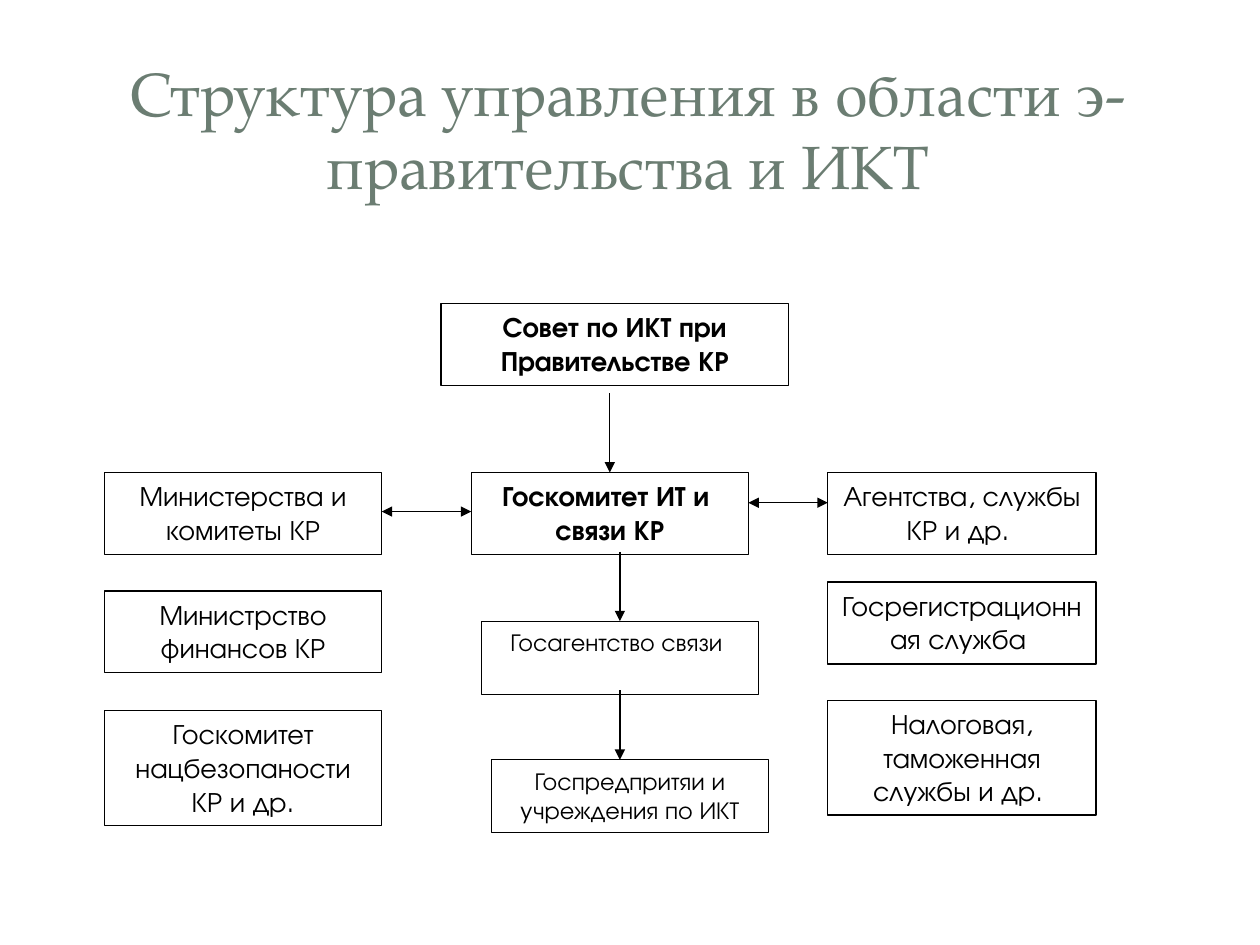
from lxml import etree
from pptx import Presentation
from pptx.dml.color import RGBColor
from pptx.enum.shapes import MSO_CONNECTOR, MSO_SHAPE
from pptx.enum.text import MSO_ANCHOR, PP_ALIGN
from pptx.oxml.ns import qn
from pptx.util import Inches, Pt

COLORS = {"title": "6B7D72", "ink": "000000"}
TITLE_FONT = "TeX Gyre Pagella"
BODY_FONT = "TeX Gyre Adventor"


def write_centred(frame, lines, font, size, color, bold=False):
    frame.word_wrap = True
    for number, line in enumerate(lines):
        para = frame.add_paragraph() if number else frame.paragraphs[0]
        para.alignment = PP_ALIGN.CENTER
        span = para.add_run()
        span.text = line
        span.font.name = font
        span.font.size = Pt(size)
        span.font.bold = bold
        span.font.color.rgb = RGBColor.from_string(COLORS[color])


deck = Presentation()
deck.slide_width = Inches(10)
deck.slide_height = Inches(7.5)
page = deck.slides.add_slide(deck.slide_layouts[6])

title = page.shapes.add_textbox(Inches(0.47), Inches(0.45), Inches(9.03), Inches(1.14))
title.text_frame.vertical_anchor = MSO_ANCHOR.MIDDLE
write_centred(title.text_frame, ["Структура управления в области э-правительства и ИКТ"],
              TITLE_FONT, 35, "title")

# Organisations: left, top, width, height, text size, bold, lines
LEFT, RIGHT = 0.83, 6.57
WIDE, NARROW = 2.2, 2.13
TALL, MEDIUM, LOW = 0.91, 0.65, 0.58
ROW = 3.75
organisations = [
    (3.5, 2.41, 2.76, MEDIUM, 16, True, ["Совет по ИКТ при Правительстве КР"]),
    (3.74, ROW, WIDE, MEDIUM, 16, True, ["Госкомитет ИТ и ", "связи КР"]),
    (3.82, 4.93, WIDE, LOW, 14, False, ["Госагентство связи "]),
    (3.9, 6.03, WIDE, LOW, 14, False, ["Госпредпритяи и учреждения по ИКТ"]),
    (LEFT, ROW, WIDE, MEDIUM, 16, False, ["Министерства и комитеты КР"]),
    (LEFT, 4.69, WIDE, MEDIUM, 16, False, ["Министрство финансов КР"]),
    (LEFT, 5.64, WIDE, TALL, 16, False, ["Госкомитет нацбезопаности КР и др."]),
    (RIGHT, ROW, NARROW, MEDIUM, 16, False, ["Агентства, службы КР и др. "]),
    (RIGHT, 4.62, NARROW, MEDIUM, 16, False, ["Госрегистрационная служба "]),
    (RIGHT, 5.56, NARROW, TALL, 16, False, ["Налоговая, таможенная службы и др. "]),
]
for left, top, width, height, size, bold, lines in organisations:
    box = page.shapes.add_shape(MSO_SHAPE.RECTANGLE, Inches(left), Inches(top),
                                Inches(width), Inches(height))
    box.shadow.inherit = False
    box.fill.background()
    box.line.color.rgb = RGBColor.from_string(COLORS["ink"])
    box.line.width = Pt(0.75)
    box.text_frame.vertical_anchor = MSO_ANCHOR.TOP
    write_centred(box.text_frame, lines, BODY_FONT, size, "ink", bold)

# Arrows: start x, start y, end x, end y, arrowheads
ONE_WAY, TWO_WAY = ["tailEnd"], ["headEnd", "tailEnd"]
arrows = [
    (4.84, 3.12, 4.84, ROW, ONE_WAY),
    (4.92, 4.38, 4.92, 4.93, ONE_WAY),
    (4.92, 5.48, 4.92, 6.03, ONE_WAY),
    (3.03, 4.06, 3.74, 4.06, TWO_WAY),
    (5.94, 3.99, RIGHT, 3.99, TWO_WAY),
]
for start_x, start_y, end_x, end_y, heads in arrows:
    arrow = page.shapes.add_connector(MSO_CONNECTOR.STRAIGHT, Inches(start_x), Inches(start_y),
                                      Inches(end_x), Inches(end_y))
    arrow.line.color.rgb = RGBColor.from_string(COLORS["ink"])
    arrow.line.width = Pt(0.75)
    outline = arrow.line._get_or_add_ln()
    for head in heads:
        etree.SubElement(outline, qn(f"a:{head}"), type="triangle")
    etree.SubElement(arrow._element.spPr, qn("a:effectLst"))

deck.save("out.pptx")
